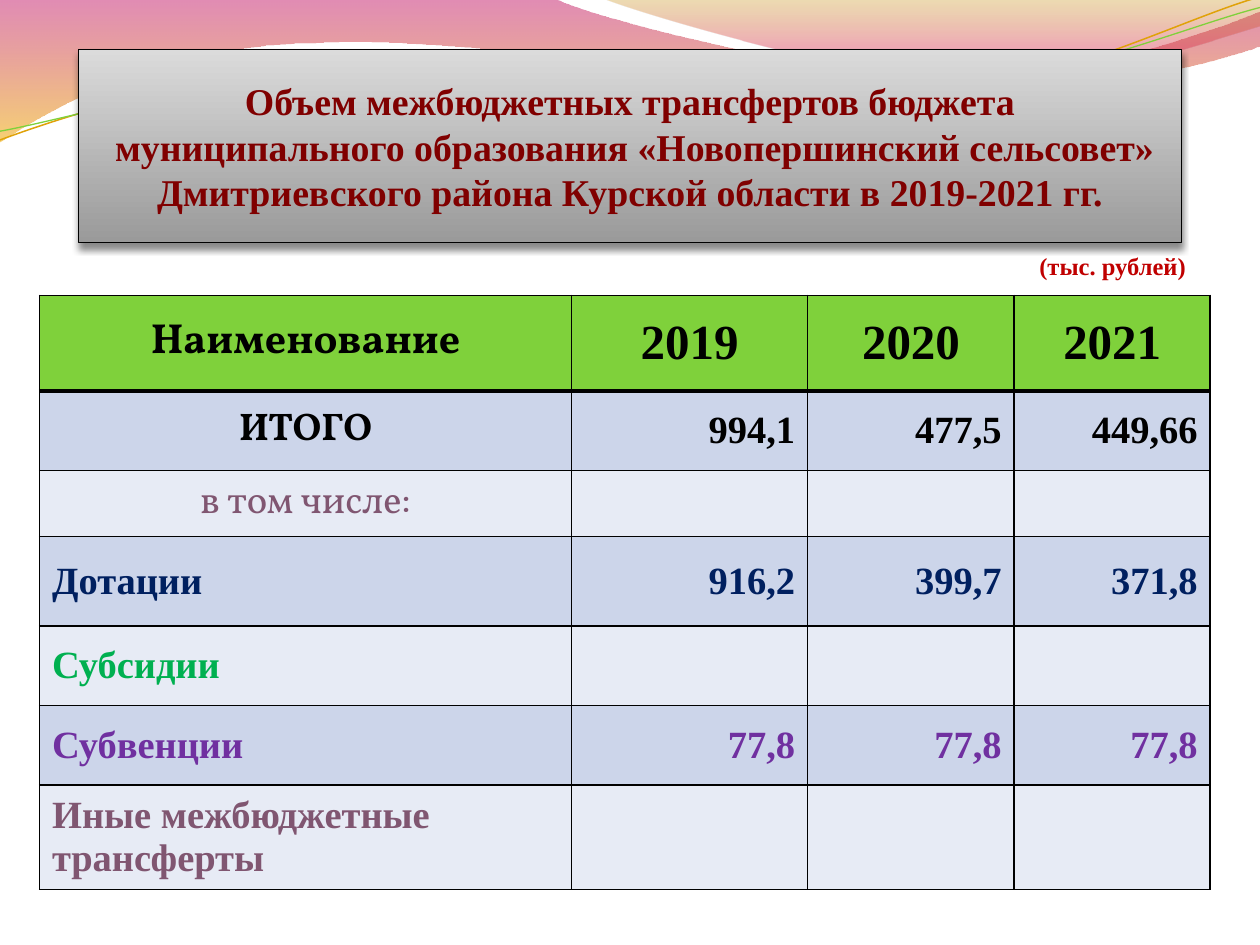
"""Build the slide on inter-budget transfers of a rural municipality."""
import math

from lxml import etree
from pptx import Presentation
from pptx import util as u
from pptx.dml import color
from pptx.enum import text
from pptx.oxml import ns, parse_xml

SERIF, DISPLAY = "Times New Roman", "Vollkorn"
LEFT, CENTER, RIGHT = text.PP_ALIGN.LEFT, text.PP_ALIGN.CENTER, text.PP_ALIGN.RIGHT
TITLE = ("Объем межбюджетных трансфертов бюджета\v муниципального образования "
         "«Новопершинский сельсовет» Дмитриевского района Курской области в 2019-2021 гг.")
UNIT = "(тыс. рублей)"

HEADER = ["Наименование", "2019", "2020", "2021"]
ROWS = [
    (["ИТОГО", "994,1", "477,5", "449,66"], "000000"),
    (["в том числе:", "", "", ""], "805671"),
    (["Дотации", "916,2", "399,7", "371,8"], "002060"),
    (["Субсидии", "", "", ""], "00B050"),
    (["Субвенции", "77,8", "77,8", "77,8"], "7030A0"),
    (["Иные межбюджетные трансферты", "", "", ""], "805671"),
]
WIDTHS = [304, 135, 118, 112]
HEIGHTS = [54.7, 45.4, 33.8, 51.1, 45.4, 45.4, 59.8]
BANDS = ["CCD5EA", "E7EBF5"]

RIBBONS = [
    ([[(0, -0.7)], [(317, -0.7)],
      [(343, 12), (478, 45), (546, 45)], [(614, 45), (690, 19), (720, 6.5)],
      [(720.7, 26)],
      [(708, 32), (626, 55), (537, 54)], [(448, 54), (275, 20), (185, 24.5)],
      [(93, 25), (33, 60), (-0.7, 81.4)]],
     [(0, "BD0059", 45), (1, "F0AB00", 55)]),
    ([[(345, -0.7)],
      [(366, 8), (491, 45), (554, 47)], [(616, 50), (692, 23), (720, 15)],
      [(720, 0)]],
     [(0, "C38B00", 30), (0.8, "E1006B", 45)]),
]
TILT = -2.7
STRANDS = [
    ([[(0, 80)], [(35, 67), (114, 41), (199, 37.4)],
      [(284, 34), (427, 64), (513, 57.6)], [(600, 51), (675, 11), (718.6, -1.4)]],
     (359.3, 41.4), "E0A209", 0.85),
    ([[(0, 75)], [(34, 69), (118, 44), (204, 40.3)],
      [(290, 37), (430, 60), (516, 54)], [(602, 48), (678, 15), (720, 4.3)]],
     (359.6, 42.5), "7FD13B", 0.75),
]


def rgb(value):
    return color.RGBColor.from_string(value)


def turn(steps, pivot, degrees):
    cos, sin = math.cos(math.radians(degrees)), math.sin(math.radians(degrees))
    px, py = pivot
    return [[(px + (x - px) * cos - (y - py) * sin, py + (x - px) * sin + (y - py) * cos)
             for x, y in step] for step in steps]


def add_outline(shapes, steps, closed):
    points = [(u.Pt(x), u.Pt(y)) for step in steps for x, y in step]
    builder = shapes.build_freeform(*points[0])
    builder.add_line_segments(points[1:], close=closed)
    shape = builder.convert_to_shape()
    shape.shadow.inherit = False
    segments = iter(list(shape._element.iter(ns.qn("a:lnTo"))))
    for step in steps[1:]:
        parts = [next(segments) for _ in step]
        if len(parts) == 3:
            curve = parts[0].makeelement(ns.qn("a:cubicBezTo"))
            parts[0].addprevious(curve)
            for part in parts:
                curve.append(part[0])
                part.getparent().remove(part)
    return shape


def fill_down(shape, stops):
    shape.fill.gradient()
    shape.fill.gradient_angle = 270
    nodes = shape._element.spPr.iter(ns.qn("a:gs"))
    for stop, node, (position, value, opacity) in zip(shape.fill.gradient_stops, nodes, stops):
        stop.position = position
        stop.color.rgb = rgb(value)
        if opacity < 100:
            etree.SubElement(node[0], ns.qn("a:alpha")).set("val", str(opacity * 1000))


def style(para, size, face, value, bold=True, align=LEFT):
    para.alignment = align
    for span in para.runs:
        span.font.size, span.font.name, span.font.bold = u.Pt(size), face, bold
        span.font.color.rgb = rgb(value)


def add_borders(cell, row):
    properties = cell._tc.get_or_add_tcPr()
    for side in "LRTB":
        heavy = (row, side) in ((0, "B"), (1, "T"))
        properties.append(parse_xml(
            f'<a:ln{side} {ns.nsdecls("a")} w="{u.Pt(3 if heavy else 1)}"><a:solidFill>'
            f'<a:srgbClr val="000000"/></a:solidFill></a:ln{side}>'))


def fill_table(table):
    table.first_row = table.horz_banding = False
    for column, width in zip(table.columns, WIDTHS):
        column.width = u.Pt(width)
    for row, (values, value) in enumerate([(HEADER, "000000"), *ROWS]):
        table.rows[row].height = u.Pt(HEIGHTS[row])
        for col, words in enumerate(values):
            cell = table.cell(row, col)
            add_borders(cell, row)
            cell.fill.solid()
            cell.fill.fore_color.rgb = rgb(BANDS[(row - 1) % 2] if row else "7FD13B")
            cell.vertical_anchor = text.MSO_ANCHOR.MIDDLE
            if not words:
                continue
            cell.text_frame.text = words
            size = 22 if row else 24 if col == 0 else 28
            face = DISPLAY if col == 0 and row < 3 else SERIF
            align = CENTER if row == 0 or face == DISPLAY else RIGHT if col else LEFT
            style(cell.text_frame.paragraphs[0], size, face, value, row != 2, align)


def place_title(title):
    title.left, title.top, title.width, title.height = map(u.Pt, (45, 28.35, 630, 110.2))
    fill_down(title, [(0, "DBDBDB", 100), (1, "9A9A9A", 100)])
    title.line.color.rgb = rgb("000000")
    title.line.width = u.Pt(0.5)
    title._element.spPr.append(parse_xml(
        f'<a:effectLst {ns.nsdecls("a")}><a:outerShdw blurRad="{u.Pt(4)}" dist="{u.Pt(3)}" '
        'dir="5400000" rotWithShape="0"><a:srgbClr val="000000"><a:alpha val="45000"/>'
        '</a:srgbClr></a:outerShdw></a:effectLst>'))
    frame = title.text_frame
    frame.text = TITLE
    frame.word_wrap, frame.auto_size = True, text.MSO_AUTO_SIZE.NONE
    frame.vertical_anchor = text.MSO_ANCHOR.MIDDLE
    style(frame.paragraphs[0], 21.6, SERIF, "800000", align=CENTER)


def main():
    deck = Presentation()
    deck.slide_width, deck.slide_height = u.Pt(720), u.Pt(540)
    page = deck.slides.add_slide(deck.slide_layouts[5])
    shapes = page.shapes
    for steps, stops in RIBBONS:
        ribbon = add_outline(shapes, steps, True)
        fill_down(ribbon, stops)
        ribbon.line.fill.background()
    for steps, pivot, value, width in STRANDS:
        strand = add_outline(shapes, turn(steps, pivot, -TILT), False)
        strand.rotation = TILT
        strand.fill.background()
        strand.line.color.rgb = rgb(value)
        strand.line.width = u.Pt(width)
    fill_table(shapes.add_table(len(HEIGHTS), len(WIDTHS), u.Pt(22.6), u.Pt(168.75),
                                u.Pt(sum(WIDTHS)), u.Pt(sum(HEIGHTS))).table)
    place_title(shapes.title)
    shapes._spTree.append(shapes.title._element)
    label = shapes.add_textbox(u.Pt(586.8), u.Pt(139.7), u.Pt(102.2), u.Pt(23.8))
    label.text_frame.text = UNIT
    label.text_frame.word_wrap = False
    style(label.text_frame.paragraphs[0], 14, SERIF, "C00000")
    deck.save("out.pptx")


if __name__ == "__main__":
    main()
